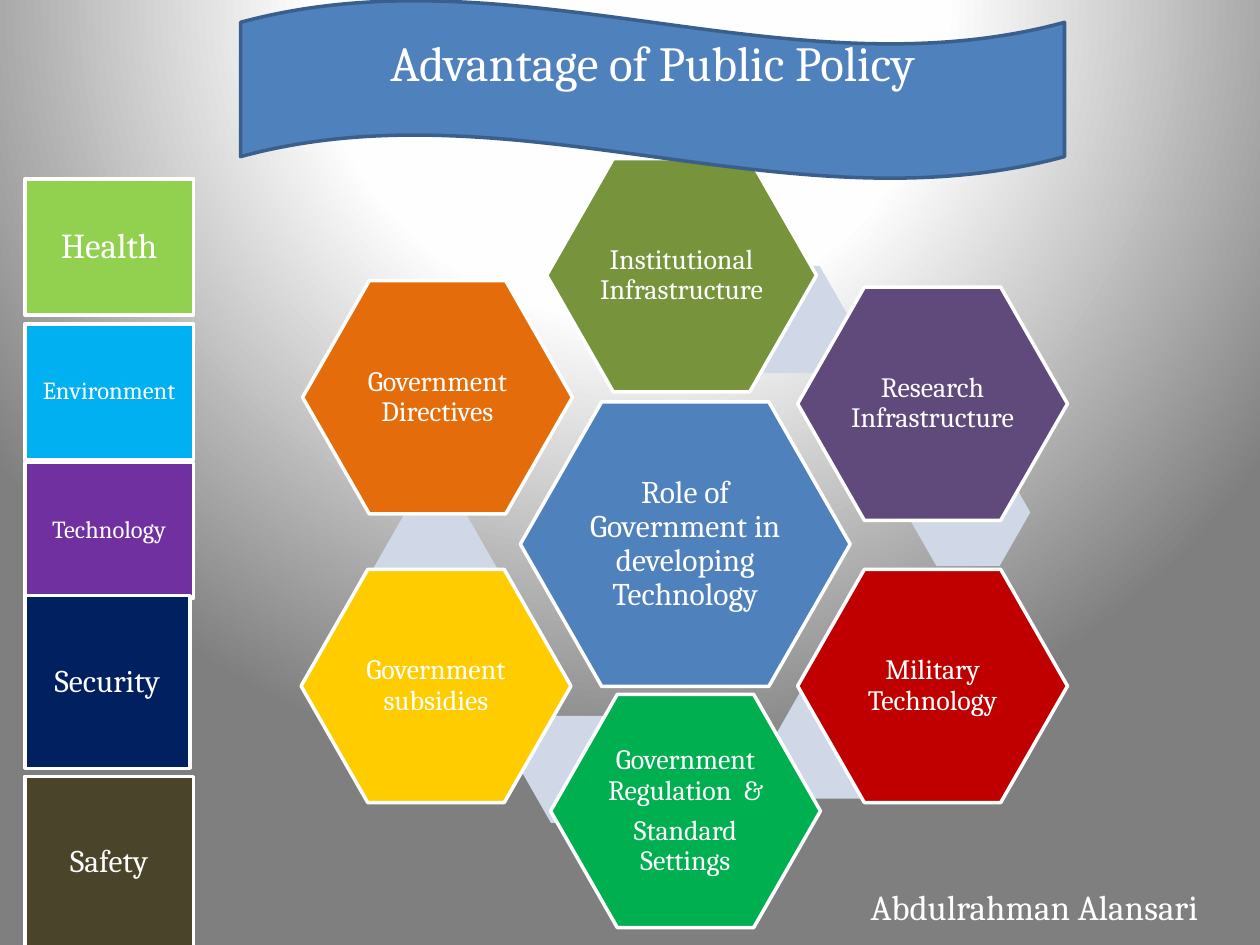
from pptx import Presentation
from pptx.dml.color import RGBColor
from pptx.enum.shapes import MSO_SHAPE
from pptx.enum.text import MSO_ANCHOR, MSO_AUTO_SIZE, PP_ALIGN
from pptx.oxml import parse_xml
from pptx.util import Cm, Pt

HEX, RECT, WAVE = MSO_SHAPE.HEXAGON, MSO_SHAPE.RECTANGLE, MSO_SHAPE.WAVE
MID, TOP = MSO_ANCHOR.MIDDLE, MSO_ANCHOR.TOP
MIDDLE, LEFT = PP_ALIGN.CENTER, PP_ALIGN.LEFT
FIXED = MSO_AUTO_SIZE.NONE

FONT = "Cambria"
WHITE = RGBColor(0xFF, 0xFF, 0xFF)
BLUE = RGBColor(0x4F, 0x81, 0xBD)
EDGE = RGBColor(0x3A, 0x5F, 0x8C)
PALE = RGBColor(0xD0, 0xD8, 0xE8)
OLIVE = RGBColor(0x77, 0x93, 0x3C)
PLUM = RGBColor(0x60, 0x4A, 0x7B)
RED = RGBColor(0xC0, 0x00, 0x00)
GREEN = RGBColor(0x00, 0xB0, 0x50)
YELLOW = RGBColor(0xFF, 0xCC, 0x00)
ORANGE = RGBColor(0xE4, 0x6C, 0x0A)
LIME = RGBColor(0x92, 0xD0, 0x50)
SKY = RGBColor(0x00, 0xB0, 0xF0)
PURPLE = RGBColor(0x70, 0x30, 0xA0)
NAVY = RGBColor(0x00, 0x20, 0x60)
BROWN = RGBColor(0x4A, 0x45, 0x2A)

TITLE = "Advantage of Public Policy"
AUTHOR = "Abdulrahman Alansari"
CORE = ["Role of Government in developing Technology"]
ROLES = [
    (["Institutional Infrastructure"], OLIVE, 11.02, 3.2),
    (["Research Infrastructure"], PLUM, 16.08, 5.79),
    (["Military Technology"], RED, 16.08, 11.48),
    (["Government Regulation  &", "Standard Settings"], GREEN, 11.1, 14),
    (["Government subsidies"], YELLOW, 6.07, 11.48),
    (["Government Directives"], ORANGE, 6.1, 5.66),
]
LINKS = [(14.63, 5.36), (18.26, 9.25), (15.52, 13.94), (10.49, 14.43), (7.52, 10.39)]
FIELDS = [
    ("Health", LIME, 20, 3.61, 3.4, 2.74),
    ("Environment", SKY, 14, 6.53, 3.4, 2.74),
    ("Technology", PURPLE, 14, 9.32, 3.4, 2.74),
    ("Security", NAVY, 18, 12.01, 3.33, 3.48),
    ("Safety", BROWN, 18, 15.65, 3.4, 3.48),
]
STOPS = [(0, "FFFFFF"), (40, "FEFEFE"), (100, "7F7F7F")]


def paint(slide):
    stops = "".join(
        f'<a:gs pos="{at * 1000}"><a:srgbClr val="{tone}"/></a:gs>' for at, tone in STOPS
    )
    back = parse_xml(
        '<p:bg xmlns:p="http://schemas.openxmlformats.org/presentationml/2006/main"'
        ' xmlns:a="http://schemas.openxmlformats.org/drawingml/2006/main">'
        f'<p:bgPr><a:gradFill rotWithShape="1"><a:gsLst>{stops}</a:gsLst>'
        '<a:path path="circle">'
        '<a:fillToRect l="50000" t="-80000" r="50000" b="180000"/></a:path>'
        "</a:gradFill><a:effectLst/></p:bgPr></p:bg>"
    )
    slide.element.cSld.insert(0, back)


def write(shape, lines, size, align=MIDDLE, anchor=MID, pad=None, tight=False):
    frame = shape.text_frame
    frame.word_wrap = True
    frame.auto_size = FIXED
    frame.vertical_anchor = anchor
    if pad is not None:
        frame.margin_left = frame.margin_right = Cm(pad)
        frame.margin_top = frame.margin_bottom = Cm(pad)
    for i, line in enumerate(lines):
        para = frame.add_paragraph() if i else frame.paragraphs[0]
        para.alignment = align
        if tight:
            para.line_spacing = 0.9
            para.space_after = Pt(round(size * 0.35, 1))
        run = para.add_run()
        run.text = line
        run.font.name = FONT
        run.font.size = Pt(size)
        run.font.color.rgb = WHITE


def draw(slide, kind, box, fill, line=WHITE):
    shape = slide.shapes.add_shape(kind, *map(Cm, box))
    shape.shadow.inherit = False
    shape.fill.solid()
    shape.fill.fore_color.rgb = fill
    if line is None:
        shape.line.fill.background()
    else:
        shape.line.color.rgb = line
        shape.line.width = Pt(2)
    if kind == HEX:
        shape.adjustments[0] = 0.286
    return shape


def main():
    deck = Presentation()
    deck.slide_width, deck.slide_height = Cm(25.4), Cm(19.05)
    slide = deck.slides.add_slide(deck.slide_layouts[5])
    paint(slide)

    core = draw(slide, HEX, (10.49, 8.1, 6.65, 5.74), BLUE)
    write(core, CORE, 18, pad=0.08, tight=True)
    for x, y in LINKS:
        draw(slide, HEX, (x, y, 2.51, 2.16), PALE, None)
    for lines, fill, x, y in ROLES:
        role = draw(slide, HEX, (x, y, 5.44, 4.7), fill)
        write(role, lines, 16, pad=0.05, tight=True)

    draw(slide, WAVE, (4.85, 0, 16.61, 3.61), BLUE, EDGE)
    title = slide.shapes.title
    title.left, title.top, title.width, title.height = map(Cm, (4.85, 0.25, 16.61, 2))
    write(title, [TITLE], 28)
    slide.shapes.element.append(title.element)

    for name, fill, size, y, w, h in FIELDS:
        field = draw(slide, RECT, (0.5, y, w, h), fill)
        write(field, [name], size, pad=0.1, tight=True)

    author = slide.shapes.add_textbox(*map(Cm, (17.3, 17.73, 7.6, 1.12)))
    write(author, [AUTHOR], 20, LEFT, TOP)
    deck.save("out.pptx")


if __name__ == "__main__":
    main()
